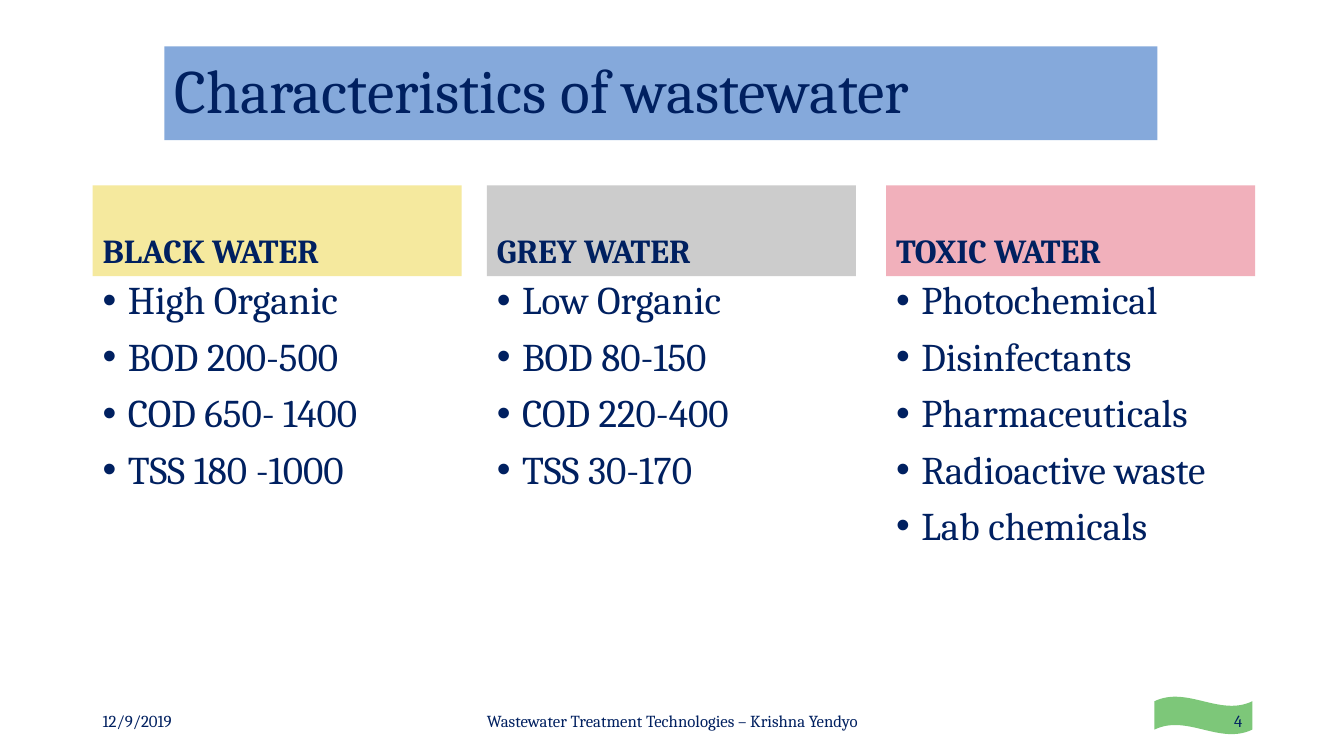
from dataclasses import dataclass

from lxml.etree import SubElement
from pptx import Presentation
from pptx.dml.color import RGBColor as Rgb
from pptx.enum.shapes import MSO_SHAPE as Kind
from pptx.enum.text import MSO_ANCHOR as Anchor, PP_ALIGN as Align
from pptx.oxml.ns import qn
from pptx.util import Inches, Pt

TITLE = "Characteristics of wastewater"
# heading, fill, left edge in percent, points
WATERS = [
    ("BLACK WATER", "F5E99E", 6.9,
     ["High Organic", "BOD 200-500", "COD 650- 1400", "TSS 180 -1000"]),
    ("GREY WATER", "CCCCCC", 36.23,
     ["Low Organic", "BOD 80-150", "COD 220-400", "TSS 30-170"]),
    ("TOXIC WATER", "F1B0BB", 65.94,
     ["Photochemical", "Disinfectants", "Pharmaceuticals",
      "Radioactive waste", "Lab chemicals"]),
]
# text, left and width in percent, alignment
FOOTER = [
    ("12/9/2019", 6.9, 22.5, Align.LEFT),
    ("Wastewater Treatment Technologies – Krishna Yendyo", 33.16, 33.76,
     Align.CENTER),
    ("4", 70.67, 22.5, Align.RIGHT),
]


@dataclass(frozen=True)
class Theme:
    font: str = "Cambria"
    ink: str = "002060"
    band: str = "85A9DB"
    wave: str = "7DC779"
    title: int = 44
    body: int = 28
    head: int = 24
    foot: int = 12


THEME = Theme()
WIDE, HIGH = Inches(13.33), Inches(7.5)
COL = 27.46
HEAD_TOP, HEAD_HIGH = 24.53, 12
BODY_TOP, BODY_HIGH = HEAD_TOP + HEAD_HIGH, 53.73
FOOT_TOP, FOOT_HIGH = 92.67, 5.33


def area(left, top, wide, high):
    """Turn percentages of the slide into lengths."""
    return [int(share * full / 100) for share, full in
            zip((left, top, wide, high), (WIDE, HIGH, WIDE, HIGH))]


def paint(slide, kind, spot, fill):
    shape = slide.shapes.add_shape(kind, *area(*spot))
    shape.shadow.inherit = False
    shape.fill.solid()
    shape.fill.fore_color.rgb = Rgb.from_string(fill)
    shape.line.fill.background()
    return shape


def add_bullet(para):
    props = para._p.get_or_add_pPr()
    props.set("marL", str(Inches(0.25)))
    props.set("indent", str(-Inches(0.25)))
    SubElement(props, qn("a:buFont"), typeface="Arial")
    SubElement(props, qn("a:buChar"), char="•")


def write(slide, lines, spot, size, fill=None, anchor=Anchor.MIDDLE,
          align=Align.LEFT, bold=False, bullet=False, pitch=0.9):
    if fill:
        box = paint(slide, Kind.RECTANGLE, spot, fill)
    else:
        box = slide.shapes.add_textbox(*area(*spot))
    frame = box.text_frame
    frame.word_wrap = True
    frame.vertical_anchor = anchor
    look = {"name": THEME.font, "size": Pt(size), "bold": bold}
    for row, line in enumerate(lines):
        para = frame.add_paragraph() if row else frame.paragraphs[0]
        if bullet:
            add_bullet(para)
        para.alignment = align
        para.line_spacing = pitch
        if row:
            para.space_before = Pt(10)
        run = para.add_run()
        run.text = line
        for key, value in look.items():
            setattr(run.font, key, value)
        run.font.color.rgb = Rgb.from_string(THEME.ink)


def main():
    deck = Presentation()
    deck.slide_width, deck.slide_height = WIDE, HIGH
    slide = deck.slides.add_slide(deck.slide_layouts[6])

    paint(slide, Kind.WAVE, (85.9, 92.13, 7.28, 5), THEME.wave)
    write(slide, [TITLE], (12.23, 6.13, 73.89, 12.4), THEME.title,
          fill=THEME.band)
    for head, fill, left, points in WATERS:
        write(slide, [head], (left, HEAD_TOP, COL, HEAD_HIGH), THEME.head,
              fill=fill, anchor=Anchor.BOTTOM, bold=True)
        write(slide, points, (left, BODY_TOP, COL, BODY_HIGH), THEME.body,
              anchor=Anchor.TOP, bullet=True)
    for text, left, wide, align in FOOTER:
        write(slide, [text], (left, FOOT_TOP, wide, FOOT_HIGH), THEME.foot,
              align=align, pitch=1.0)
    deck.save("out.pptx")


if __name__ == "__main__":
    main()
